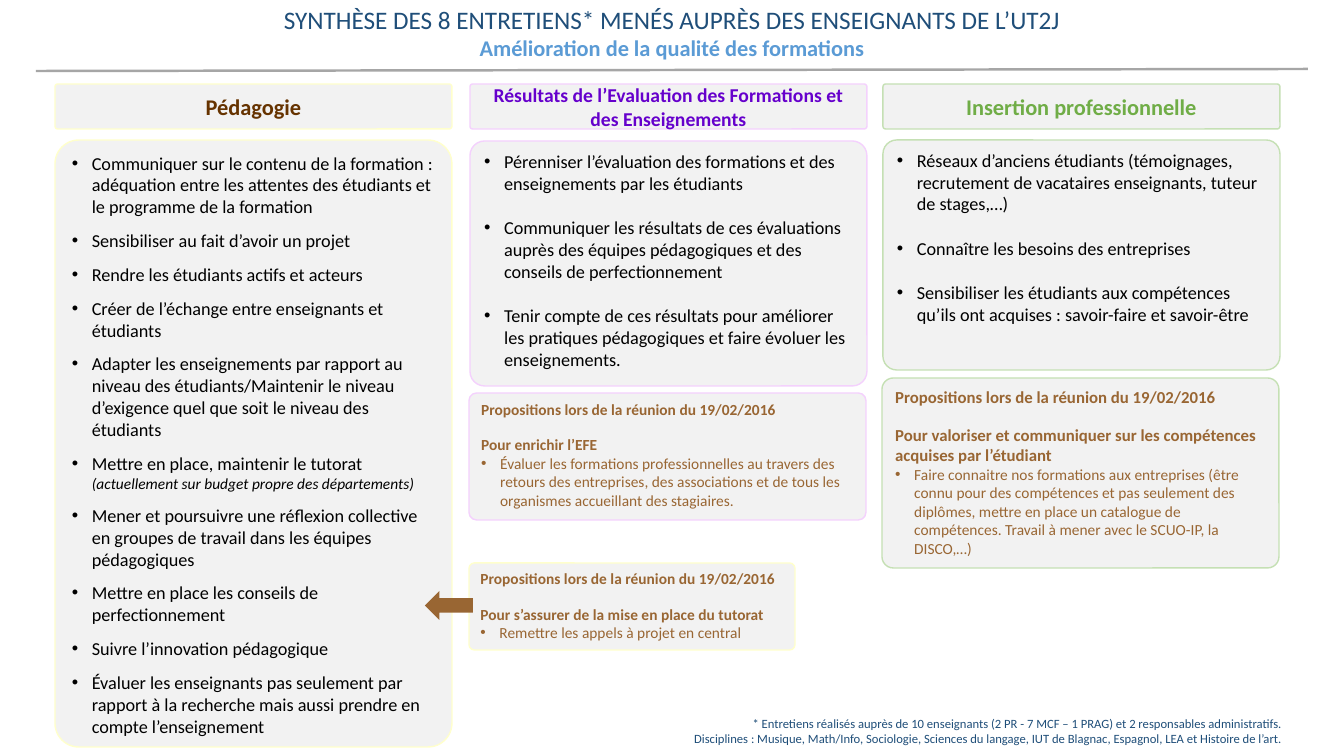
from lxml import etree
from pptx import Presentation
from pptx.dml.color import RGBColor
from pptx.enum.shapes import MSO_CONNECTOR, MSO_SHAPE
from pptx.enum.text import MSO_ANCHOR, PP_ALIGN
from pptx.oxml.ns import qn
from pptx.util import Emu, Pt

EMU_PER_PX = 914400 / 100.8
FONT = "Calibri"
BLACK = RGBColor(0x00, 0x00, 0x00)
NAVY = RGBColor(0x1F, 0x4E, 0x79)
BLUE = RGBColor(0x5B, 0x9B, 0xD5)
DARK_BROWN = RGBColor(0x66, 0x33, 0x00)
BROWN = RGBColor(0x99, 0x66, 0x33)
PURPLE = RGBColor(0x66, 0x00, 0xCC)
GREEN = RGBColor(0x70, 0xAD, 0x47)
GREY = RGBColor(0xA6, 0xA6, 0xA6)
CARD_GREY = RGBColor(0xF2, 0xF2, 0xF2)
PALE_YELLOW = RGBColor(0xFF, 0xFF, 0xCC)
PALE_PINK = RGBColor(0xF4, 0xD1, 0xFD)
PALE_GREEN = RGBColor(0xC5, 0xE0, 0xB4)

MEETING = "Propositions lors de la réunion du 19/02/2016"
COLUMN_WIDTH = 397

# Heading, colour, size, border, left, (top, height) of the list, gap, items
COLUMNS = [
    ("Pédagogie", DARK_BROWN, 16, PALE_YELLOW, 55, (140, 607), 8.5, [
        "Communiquer sur le contenu de la formation : adéquation entre les "
        "attentes des étudiants et le programme de la formation",
        "Sensibiliser au fait d’avoir un projet",
        "Rendre les étudiants actifs et acteurs",
        "Créer de l’échange entre enseignants et étudiants",
        "Adapter les enseignements par rapport au niveau des étudiants/Maintenir "
        "le niveau d’exigence quel que soit le niveau des étudiants",
        ("Mettre en place, maintenir le tutorat ",
         "(actuellement sur budget propre des départements)"),
        "Mener et poursuivre une réflexion collective en groupes de travail dans "
        "les équipes pédagogiques",
        "Mettre en place les conseils de perfectionnement",
        "Suivre l’innovation pédagogique",
        "Évaluer les enseignants pas seulement par rapport à la recherche mais "
        "aussi prendre en compte l’enseignement",
    ]),
    ("Résultats de l’Evaluation des Formations et des Enseignements",
     PURPLE, 14, PALE_PINK, 470, (141, 245), 16, [
         "Pérenniser l’évaluation des formations et des enseignements par les "
         "étudiants",
         "Communiquer les résultats de ces évaluations auprès des équipes "
         "pédagogiques et des conseils de perfectionnement",
         "Tenir compte de ces résultats pour améliorer les pratiques "
         "pédagogiques et faire évoluer les enseignements.",
     ]),
    ("Insertion professionnelle", GREEN, 16, PALE_GREEN, 883, (140, 230), 16, [
        "Réseaux d’anciens étudiants (témoignages, recrutement de vacataires "
        "enseignants, tuteur de stages,…)",
        "Connaître les besoins des entreprises",
        "Sensibiliser les étudiants aux compétences qu’ils ont acquises : "
        "savoir-faire et savoir-être",
    ]),
]

# Box, border, size of the titles, gap, aim, proposal
PROPOSALS = [
    ((469, 393, COLUMN_WIDTH, 127), PALE_PINK, 11, 12, "Pour enrichir l’EFE",
     "Évaluer les formations professionnelles au travers des retours des "
     "entreprises, des associations et de tous les organismes accueillant des "
     "stagiaires."),
    ((469, 563, 326, 87), PALE_YELLOW, 11, 12,
     "Pour s’assurer de la mise en place du tutorat",
     "Remettre les appels à projet en central"),
    ((882, 378, COLUMN_WIDTH, 190), PALE_GREEN, 12, 13,
     "Pour valoriser et communiquer sur les compétences acquises par l’étudiant",
     "Faire connaitre nos formations aux entreprises (être connu pour des "
     "compétences et pas seulement des diplômes, mettre en place un catalogue de "
     "compétences. Travail à mener avec le SCUO-IP, la DISCO,…)"),
]


def px(*lengths):
    return [Emu(round(length * EMU_PER_PX)) for length in lengths]


def style(run, size, color, bold=False, italic=False):
    font = run.font
    font.name, font.size, font.bold, font.italic = FONT, Pt(size), bold, italic
    font.color.rgb = color


def add_line(frame, text, size, color, bold=False, align=PP_ALIGN.LEFT, gap=0):
    """Fill the empty first paragraph, or append one, and return it."""
    line = frame.paragraphs[0]
    if line.text:
        line = frame.add_paragraph()
    line.text = text
    line.alignment = align
    line.space_after = Pt(gap)
    style(line.runs[0], size, color, bold)
    return line


def add_bullet(line, indent):
    properties = line._p.get_or_add_pPr()
    hang = px(indent)[0]
    properties.set("marL", str(hang))
    properties.set("indent", str(-hang))
    etree.SubElement(properties, qn("a:buFont")).set("typeface", "Arial")
    etree.SubElement(properties, qn("a:buChar")).set("char", "•")


def add_card(slide, box, border, anchor=MSO_ANCHOR.TOP):
    """Add a rounded grey card and return its text frame."""
    card = slide.shapes.add_shape(MSO_SHAPE.ROUNDED_RECTANGLE, *px(*box))
    card.adjustments[0] = 0.06
    card.shadow.inherit = False
    card.fill.solid()
    card.fill.fore_color.rgb = CARD_GREY
    card.line.color.rgb = border
    card.line.width = Pt(1)
    card.text_frame.word_wrap = True
    card.text_frame.vertical_anchor = anchor
    return card.text_frame


def add_column(slide, heading, color, size, border, left, extent, gap, items):
    header = add_card(slide, (left, 84, COLUMN_WIDTH, 45), border,
                      MSO_ANCHOR.MIDDLE)
    add_line(header, heading, size, color, True, PP_ALIGN.CENTER)
    top, height = extent
    panel = add_card(slide, (left, top, COLUMN_WIDTH, height), border)
    for item in items:
        text, *remarks = [item] if isinstance(item, str) else item
        line = add_line(panel, text, 13, BLACK, gap=gap)
        add_bullet(line, 20)
        for remark in remarks:
            run = line.add_run()
            run.text = remark
            style(run, 11, BLACK, italic=True)


def add_proposal(slide, box, border, size, gap, aim, proposal):
    frame = add_card(slide, box, border)
    add_line(frame, MEETING, size, BROWN, True, gap=gap)
    add_line(frame, aim, size, BROWN, True)
    add_bullet(add_line(frame, proposal, 11, BROWN), 19)


def add_text(slide, box, align, lines):
    frame = slide.shapes.add_textbox(*px(*box)).text_frame
    frame.word_wrap = True
    for text, size, color, bold in lines:
        add_line(frame, text, size, color, bold, align)


def add_rule(slide, *ends):
    rule = slide.shapes.add_connector(MSO_CONNECTOR.STRAIGHT, *px(*ends))
    rule.line.color.rgb = GREY
    rule.line.width = Pt(1.75)
    etree.SubElement(rule._element.spPr, qn("a:effectLst"))


def add_left_arrow(slide, *box):
    arrow = slide.shapes.add_shape(MSO_SHAPE.LEFT_ARROW, *px(*box))
    arrow.shadow.inherit = False
    arrow.fill.solid()
    arrow.fill.fore_color.rgb = BROWN
    arrow.line.fill.background()


def main():
    deck = Presentation()
    deck.slide_width, deck.slide_height = px(1344, 756)
    slide = deck.slides.add_slide(deck.slide_layouts[6])
    add_text(slide, (0, -1, 1344, 68), PP_ALIGN.CENTER, [
        ("SYNTHÈSE DES 8 ENTRETIENS* MENÉS AUPRÈS DES ENSEIGNANTS DE L’UT2J",
         18, NAVY, False),
        ("Amélioration de la qualité des formations", 16, BLUE, True),
    ])
    add_rule(slide, 36, 71, 1308, 69)
    for column in COLUMNS:
        add_column(slide, *column)
    for proposal in PROPOSALS:
        add_proposal(slide, *proposal)
    add_left_arrow(slide, 425, 591, 48, 29)
    add_text(slide, (55, 711, 1236, 40), PP_ALIGN.RIGHT, [
        ("* Entretiens réalisés auprès de 10 enseignants (2 PR - 7 MCF – 1 PRAG) "
         "et 2 responsables administratifs.", 9, NAVY, False),
        ("Disciplines : Musique, Math/Info, Sociologie, Sciences du langage, IUT "
         "de Blagnac, Espagnol, LEA et Histoire de l’art.", 9, NAVY, False),
    ])
    deck.save("out.pptx")


if __name__ == "__main__":
    main()
